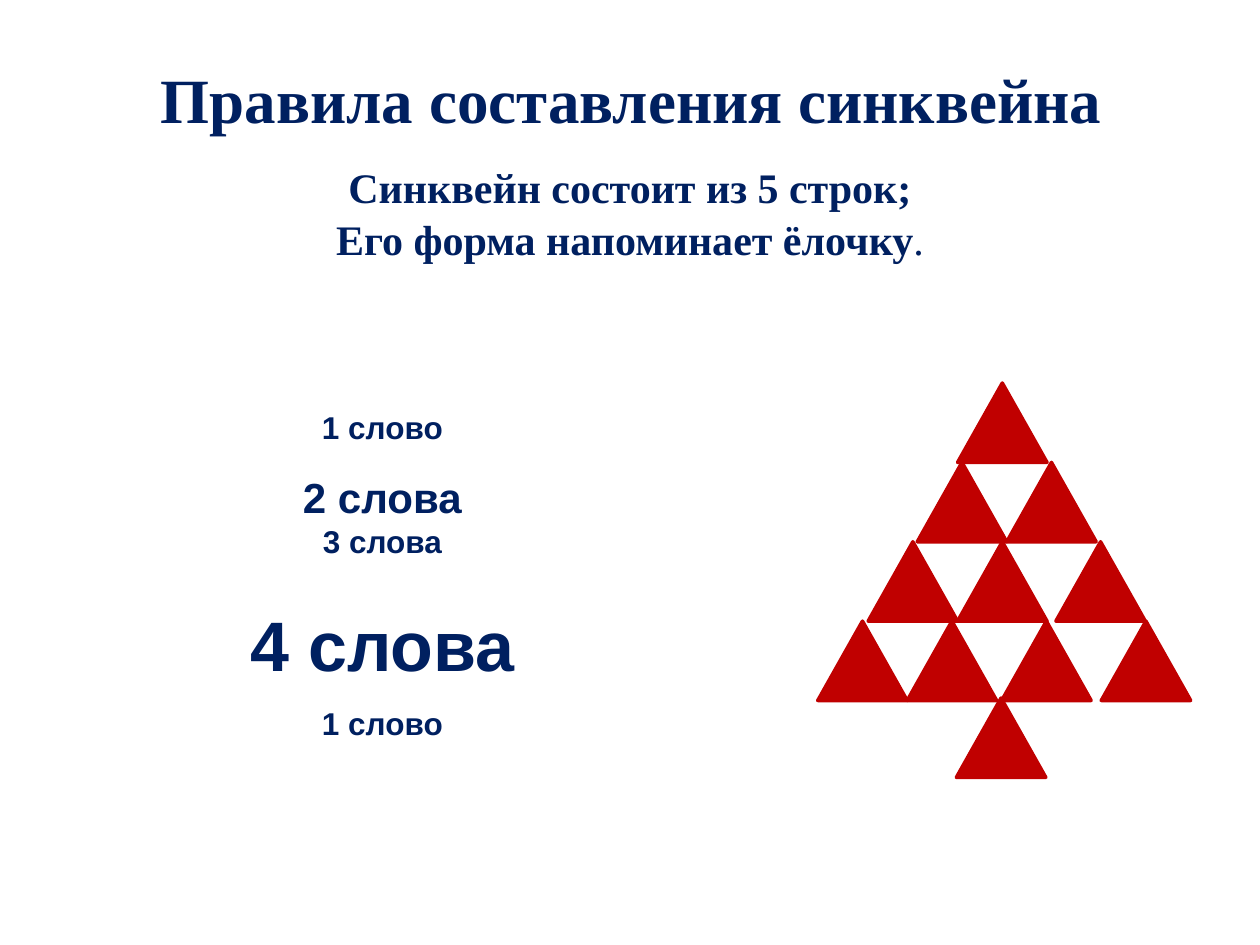
import pptx
import pptx.dml.color
import pptx.enum.shapes
import pptx.enum.text
import pptx.oxml.ns
import pptx.util
import lxml.etree

PX = 9144
NAVY = pptx.dml.color.RGBColor(0x00, 0x20, 0x60)
RED = pptx.dml.color.RGBColor(0xC0, 0x00, 0x00)
SERIF = "Times New Roman"
SANS = "Arial"
CENTER = pptx.enum.text.PP_ALIGN.CENTER

RULES = [
    [("Синквейн состоит из 5 строк;", True)],
    [("Его форма напоминает ёлочку", True), (".", False)],
]
WORD_COUNTS = [
    ("1 слово", 18, 1.5),
    ("2 слова", 24, 1.5),
    ("3 слова", 18, 1.0),
    ("4 слова", 40, 1.5),
    ("1 слово", 18, 1.5),
]
TREE_ROWS = [
    (0, [111]),
    (63, [79, 150]),
    (126, [40, 111, 189]),
    (189, [0, 71, 146, 225]),
    (250, [110]),
]


def place(region, box):
    region.left, region.top, region.width, region.height = (n * PX for n in box)


def add_run(paragraph, text, size, font, bold=True):
    run = paragraph.add_run()
    run.text = text
    run.font.size = pptx.util.Pt(size)
    run.font.name = font
    run.font.bold = bold
    run.font.color.rgb = NAVY


def next_paragraph(frame, index):
    paragraph = frame.add_paragraph() if index else frame.paragraphs[0]
    paragraph.alignment = CENTER
    return paragraph


def fill_heading(heading, box):
    place(heading, box)
    heading.text_frame.vertical_anchor = pptx.enum.text.MSO_ANCHOR.MIDDLE
    add_run(next_paragraph(heading.text_frame, 0), "Правила составления синквейна", 36, SERIF)


def fill_rules(rules, box):
    place(rules, box)
    for index, pieces in enumerate(RULES):
        paragraph = next_paragraph(rules.text_frame, index)
        paragraph.space_before = pptx.util.Pt(index)
        properties = paragraph._p.get_or_add_pPr()
        properties.set("marL", "0")
        properties.set("indent", "0")
        lxml.etree.SubElement(properties, pptx.oxml.ns.qn("a:buNone"))
        for text, bold in pieces:
            add_run(paragraph, text, 24, SERIF, bold)


def add_word_counts(slide, box):
    counts = slide.shapes.add_textbox(*(n * PX for n in box))
    frame = counts.text_frame
    frame.word_wrap = True
    frame.auto_size = pptx.enum.text.MSO_AUTO_SIZE.SHAPE_TO_FIT_TEXT
    for index, (text, size, spacing) in enumerate(WORD_COUNTS):
        paragraph = next_paragraph(frame, index)
        paragraph.line_spacing = spacing
        add_run(paragraph, text, size, SANS)


def add_tree(slide, left, top, branch_width, branch_height):
    tree = slide.shapes.add_group_shape()
    for row_top, offsets in TREE_ROWS:
        for offset in offsets:
            branch = tree.shapes.add_shape(
                pptx.enum.shapes.MSO_SHAPE.ISOSCELES_TRIANGLE,
                (left + offset) * PX, (top + row_top) * PX,
                branch_width * PX, branch_height * PX)
            branch.shadow.inherit = False
            branch.fill.solid()
            branch.fill.fore_color.rgb = RED
            branch.line.color.rgb = RED
            branch.line.width = pptx.util.Pt(2)
            outline = branch.line._get_or_add_ln()
            lxml.etree.SubElement(outline, pptx.oxml.ns.qn("a:round"))


def main():
    deck = pptx.Presentation()
    deck.slide_width = 1000 * PX
    deck.slide_height = 750 * PX
    slide = deck.slides.add_slide(deck.slide_layouts[1])
    fill_heading(slide.shapes.title, (51, 29, 900, 98))
    fill_rules(slide.placeholders[1], (50, 123, 900, 547))
    add_tree(slide, 649, 304, 71, 63)
    add_word_counts(slide, (146, 304, 315, 293))
    deck.save("out.pptx")


if __name__ == "__main__":
    main()
